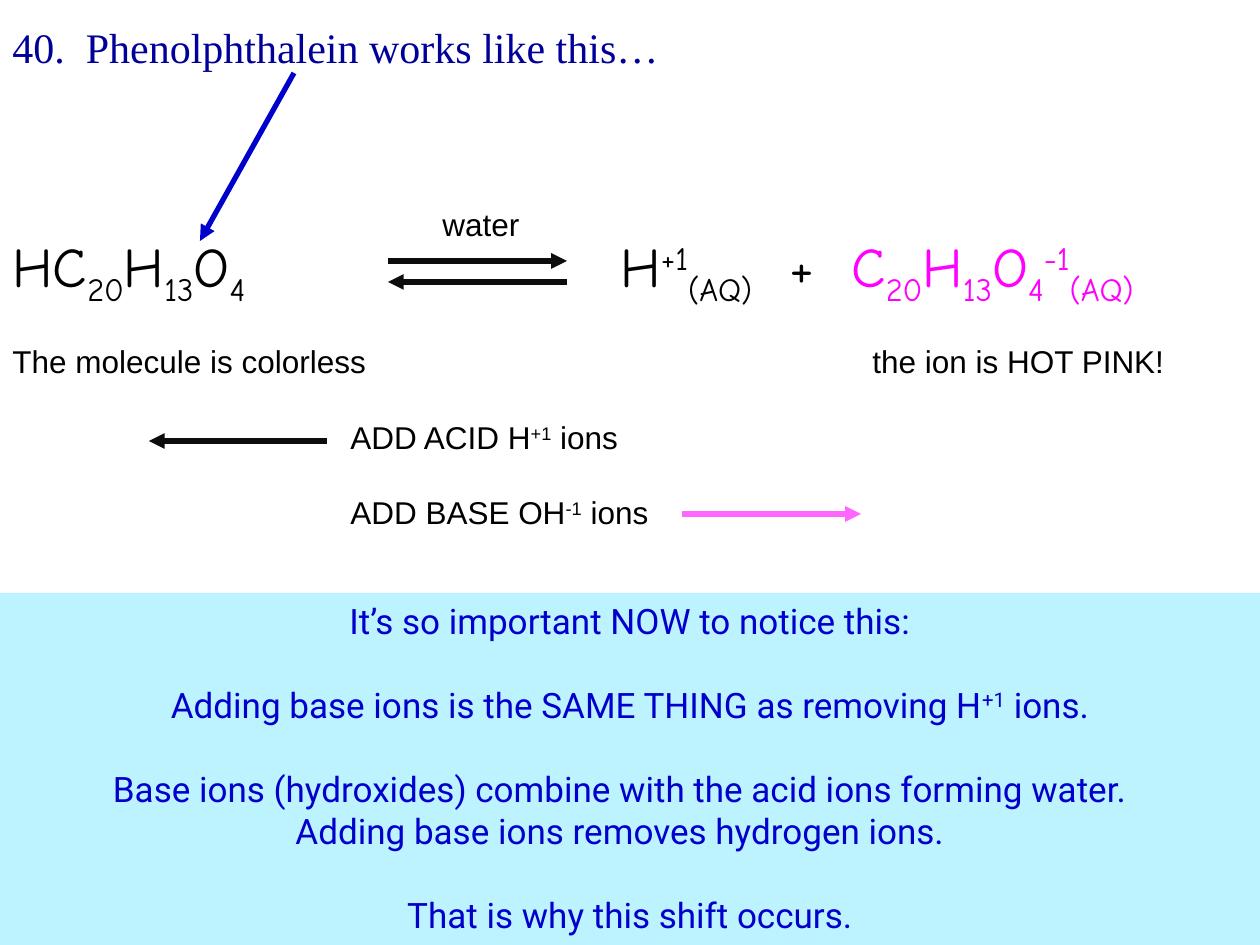
"""Build a slide on how phenolphthalein reacts to acid and base."""
from lxml import etree
from pptx import Presentation
from pptx.dml.color import RGBColor
from pptx.enum.shapes import MSO_CONNECTOR, MSO_SHAPE
from pptx.enum.text import MSO_ANCHOR, PP_ALIGN
from pptx.oxml.ns import qn
from pptx.util import Pt

LINE = MSO_CONNECTOR.STRAIGHT
RECT = MSO_SHAPE.RECTANGLE
TOP = MSO_ANCHOR.TOP
LEFT, MID = PP_ALIGN.LEFT, PP_ALIGN.CENTER
PX = 914400 / 126
BASE = {"_": "-25000", "^": "30000"}
THEME = {
    "title": ("Times New Roman", 24, "000099"),
    "atom": ("Comic Neue", 32, "000000"),
    "ion": ("Comic Neue", 32, "FF00FF"),
    "body": ("Arial", 18, "000000"),
    "note": ("Roboto", 20, "0000CC"),
    "panel": "BDF2FF",
    "blue": "0000CC",
    "dark": "0D0D0D",
    "pink": "FF65FF",
}


def px(*vals):
    return [round(v * PX) for v in vals]


def write(para, text, style, align=LEFT):
    face, size, color = THEME[style]
    para.alignment = align
    para.font.name = face
    para.font.size = Pt(size)
    para.font.color.rgb = RGBColor.from_string(color)
    for part in text.split("|"):
        run = para.add_run()
        run.text = part.lstrip("_^")
        if part[0] in BASE:
            run._r.get_or_add_rPr().set("baseline", BASE[part[0]])


prs = Presentation()
prs.slide_width, prs.slide_height = px(1260, 945)
slide = prs.slides.add_slide(prs.slide_layouts[6])
shapes = slide.shapes

labels = [
    (0, 15, 1260, 56, "title", "40.  Phenolphthalein works like this…"),
    (0, 225, 380, 80, "atom", "HC|_20|H|_13|O|_4"),
    (608, 225, 160, 80, "atom", "H|^+1|_(AQ)"),
    (777, 225, 60, 80, "atom", "+"),
    (839, 225, 421, 80, "ion", "C|_20|H|_13|O|_4|^-1|_(AQ)"),
    (430, 199, 126, 50, "body", "water"),
    (0, 336, 500, 50, "body", "The molecule is colorless"),
    (860, 336, 400, 50, "body", "the ion is HOT PINK!"),
    (338, 412, 340, 50, "body", "ADD ACID H|^+1| ions"),
    (338, 487, 340, 50, "body", "ADD BASE OH|^-1| ions"),
]
for x, y, w, h, style, text in labels:
    frame = shapes.add_textbox(*px(x, y, w, h)).text_frame
    frame.word_wrap = True
    write(frame.paragraphs[0], text, style)

arrows = [
    (294, 73, 200, 241, "blue"),
    (388, 261, 567, 261, "dark"),
    (567, 282, 388, 282, "dark"),
    (327, 441, 149, 441, "dark"),
    (682, 514, 861, 514, "pink"),
]
for x1, y1, x2, y2, color in arrows:
    arrow = shapes.add_connector(LINE, *px(x1, y1, x2, y2))
    arrow.line.width = Pt(3)
    arrow.line.color.rgb = RGBColor.from_string(THEME[color])
    etree.SubElement(arrow.line._get_or_add_ln(), qn("a:tailEnd"), type="triangle")
    etree.SubElement(arrow._element.spPr, qn("a:effectLst"))

panel = shapes.add_shape(RECT, *px(0, 593, 1260, 352))
panel.shadow.inherit = False
panel.fill.solid()
panel.fill.fore_color.rgb = RGBColor.from_string(THEME["panel"])
panel.line.fill.background()
frame = panel.text_frame
frame.word_wrap = True
frame.vertical_anchor = TOP
notes = [
    (0, 0, "It’s so important NOW to notice this:"),
    (24, 0, "Adding base ions is the SAME THING as removing H|^+1| ions."),
    (24, 20, "Base ions (hydroxides) combine with the acid ions forming water."),
    (0, 20, "Adding base ions removes hydrogen ions."),
    (24, 0, "That is why this shift occurs."),
]
for i, (gap, inset, text) in enumerate(notes):
    para = frame.add_paragraph() if i else frame.paragraphs[0]
    write(para, text, "note", MID)
    para.space_before = Pt(gap)
    para._p.get_or_add_pPr().set("marR", str(*px(inset)))

prs.save("out.pptx")
